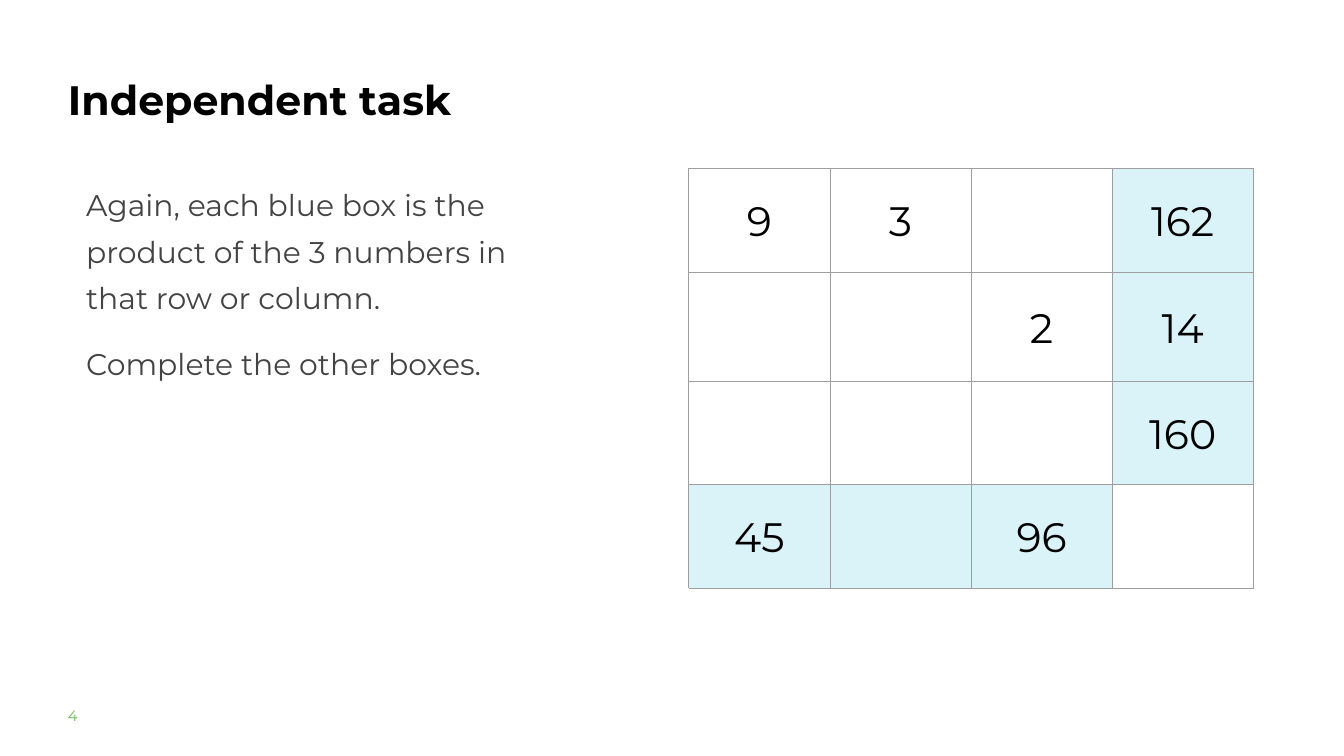
from lxml import etree
from pptx import Presentation
from pptx.dml.color import RGBColor
from pptx.enum import text
from pptx.oxml import ns
from pptx.util import Inches, Pt

TITLE = "Independent task"
INSTRUCTIONS = [
    "Again, each blue box is the product of the 3 numbers in that row or column.",
    "Complete the other boxes.",
]
SLIDE_NUMBER = "4"
GRID = [
    ["9", "3", "", "162"],
    ["", "", "2", "14"],
    ["", "", "", "160"],
    ["45", "", "96", ""],
]
ROW_HEIGHTS = [1.54, 1.62, 1.54, 1.54]
COLUMN_WIDTH = 2.1
FONT = "Montserrat"
BLACK, GREY, GREEN = "000000", "434343", "65BE4B"
PRODUCT_BLUE, BORDER_GREY = "D9F3F8", "9E9E9E"


def color(value):
    return RGBColor.from_string(value)


def style(paragraph, size, value, spacing, bold=False,
          align=text.PP_ALIGN.LEFT):
    paragraph.alignment = align
    paragraph.line_spacing = spacing
    font = paragraph.font
    font.name, font.size, font.bold = FONT, Pt(size), bold
    font.color.rgb = color(value)


def place(shape, left, top, width, height):
    """Set position and size, and let the text wrap from the top."""
    shape.left, shape.top = Inches(left), Inches(top)
    shape.width, shape.height = Inches(width), Inches(height)
    frame = shape.text_frame
    frame.word_wrap = True
    frame.auto_size = text.MSO_AUTO_SIZE.NONE
    frame.vertical_anchor = text.MSO_ANCHOR.TOP
    return frame


def add_borders(cell):
    properties = cell._tc.get_or_add_tcPr()
    for side in ("lnL", "lnR", "lnT", "lnB"):
        line = etree.SubElement(properties, ns.qn(f"a:{side}"), w=str(Pt(0.75)))
        fill = etree.SubElement(line, ns.qn("a:solidFill"))
        etree.SubElement(fill, ns.qn("a:srgbClr"), val=BORDER_GREY)


presentation = Presentation()
presentation.slide_width, presentation.slide_height = Inches(20), Inches(11.25)
slide = presentation.slides.add_slide(presentation.slide_layouts[1])

frame = place(slide.shapes.title, 0.91, 0.84, 7.11, 0.98)
frame.text = TITLE
style(frame.paragraphs[0], 44, BLACK, 1.3, bold=True)

frame = place(slide.placeholders[1], 1.18, 2.57, 6.68, 4.1)
frame.text = "\n".join(INSTRUCTIONS)
for index, paragraph in enumerate(frame.paragraphs):
    properties = paragraph._p.get_or_add_pPr()
    properties.set("marL", "0")
    properties.set("indent", "0")
    etree.SubElement(properties, ns.qn("a:buNone"))
    style(paragraph, 32, GREY, 1.3)
    paragraph.space_before = Pt(20 if index else 0)

number_box = slide.shapes.add_textbox(0, 0, 0, 0)
frame = place(number_box, 0.91, 10.38, 0.89, 0.42)
frame.text = SLIDE_NUMBER
style(frame.paragraphs[0], 16, GREEN, 1.3)

size = len(GRID)
table = slide.shapes.add_table(
    size, size, Inches(10.25), Inches(2.51),
    Inches(COLUMN_WIDTH * size), Inches(sum(ROW_HEIGHTS))).table
table.first_row = table.horz_banding = False
for column in table.columns:
    column.width = Inches(COLUMN_WIDTH)
for r, (values, height) in enumerate(zip(GRID, ROW_HEIGHTS)):
    table.rows[r].height = Inches(height)
    for c, value in enumerate(values):
        cell = table.cell(r, c)
        cell.text = value
        cell.vertical_anchor = text.MSO_ANCHOR.MIDDLE
        cell.margin_left = cell.margin_right = Inches(0.07)
        cell.margin_top = cell.margin_bottom = 0
        style(cell.text_frame.paragraphs[0], 44, BLACK, 1.07,
              align=text.PP_ALIGN.CENTER)
        add_borders(cell)
        # Products fill the last row and column, except their shared corner.
        if (r == size - 1) != (c == size - 1):
            cell.fill.solid()
            cell.fill.fore_color.rgb = color(PRODUCT_BLUE)
        else:
            cell.fill.background()

presentation.save("out.pptx")
